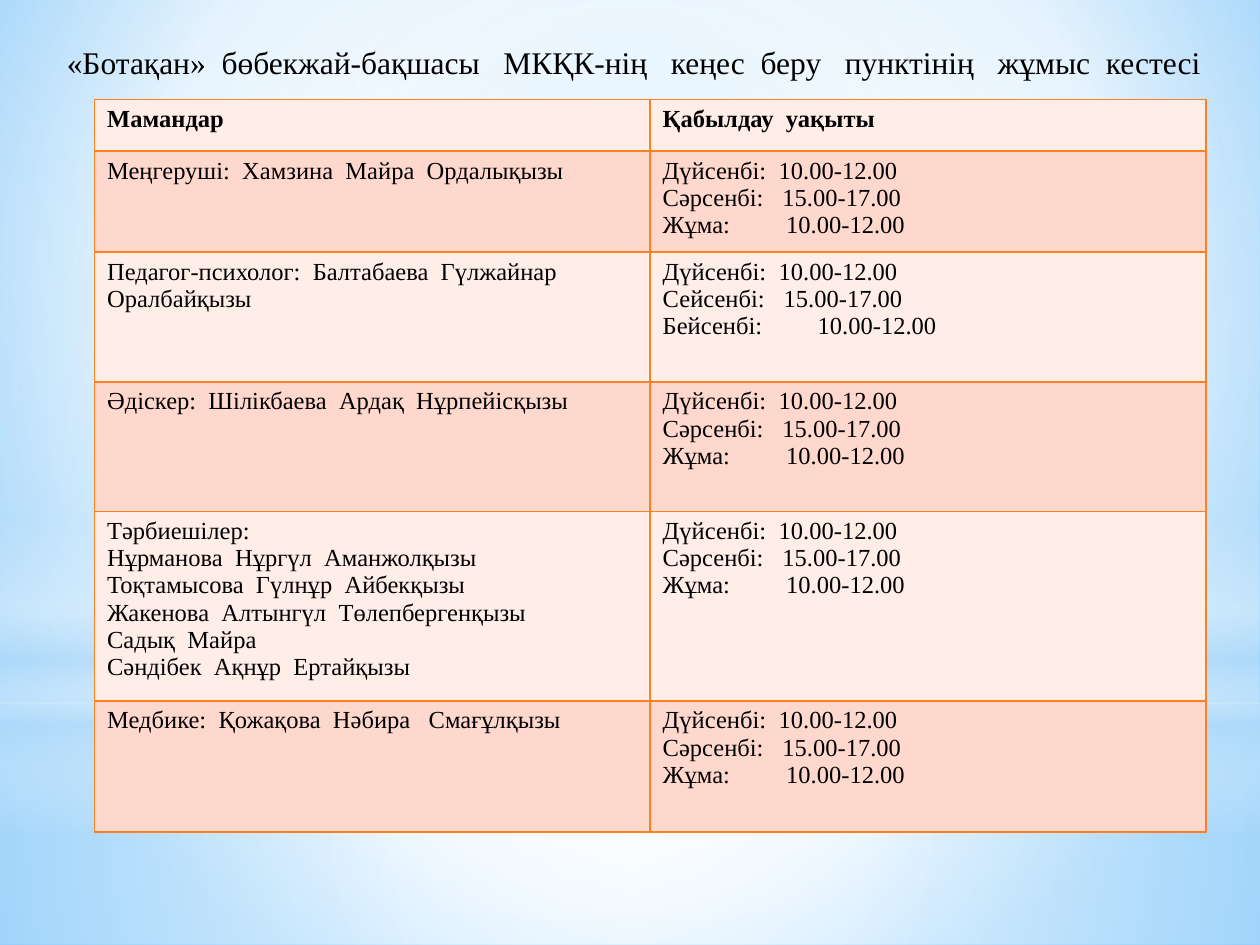
import pptx
import pptx.dml.color
import pptx.enum.shapes
import pptx.enum.text
import pptx.oxml
import pptx.oxml.ns
import pptx.util
from pptx.util import Inches

RGBColor = pptx.dml.color.RGBColor
BLACK = RGBColor(0x00, 0x00, 0x00)
WHITE = RGBColor(0xFF, 0xFF, 0xFF)
SKY = RGBColor(0x9E, 0xD5, 0xFF)
DEEP_SKY = RGBColor(0x5B, 0xB9, 0xFF)
MIST = RGBColor(0xB4, 0xDC, 0xFA)
ORANGE = RGBColor(0xFF, 0x80, 0x21)
PALE_PEACH = RGBColor(0xFF, 0xED, 0xE8)
PEACH = RGBColor(0xFF, 0xD8, 0xCD)

FONT = "Times New Roman"
HEADING = "«Ботақан»  бөбекжай-бақшасы   МКҚК-нің   кеңес  беру   пунктінің   жұмыс  кестесі"
HEADERS = ["Мамандар", "Қабылдау  уақыты"]
DAYS = ["Дүйсенбі", "Сәрсенбі", "Жұма"]
PSYCHOLOGIST_DAYS = ["Дүйсенбі", "Сейсенбі", "Бейсенбі"]
HOURS = ["10.00-12.00", "15.00-17.00", "10.00-12.00"]
HOUR_STOPS = {"Дүйсенбі": 0.92, "Сәрсенбі": 0.95, "Сейсенбі": 0.96,
              "Жұма": 0.98, "Бейсенбі": 1.23}
SPECIALISTS = [
    (["Меңгеруші:  Хамзина  Майра  Ордалықызы"], DAYS, 0.8),
    (["Педагог-психолог:  Балтабаева  Гүлжайнар  Оралбайқызы"], PSYCHOLOGIST_DAYS, 1.03),
    (["Әдіскер:  Шілікбаева  Ардақ  Нұрпейісқызы"], DAYS, 1.03),
    (["Тәрбиешілер:",
      "Нұрманова  Нұргүл  Аманжолқызы",
      "Тоқтамысова  Гүлнұр  Айбекқызы",
      "Жакенова  Алтынгүл  Төлепбергенқызы",
      "Садық  Майра",
      "Сәндібек  Ақнұр  Ертайқызы"], DAYS, 1.5),
    (["Медбике:  Қожақова  Нәбира   Смағұлқызы"], DAYS, 1.04),
]
HEADER_HEIGHT = 0.41

CENTRE = '<a:path path="circle"><a:fillToRect l="50000" t="50000" r="50000" b="50000"/></a:path>'
UPPER = '<a:path path="circle"><a:fillToRect l="20000" t="10000" r="20000" b="60000"/></a:path>'
DOWNWARD = '<a:lin ang="5400000" scaled="0"/>'

GLOWS = [
    ("RECTANGLE", (0, 5.58, 10, 1.92), CENTRE,
     [(0, WHITE, 91), (37, WHITE, 76), (100, MIST, 79)]),
    ("RECTANGLE", (0, 0, 10, 5.58), CENTRE,
     [(0, WHITE, 89), (48, WHITE, 62), (100, MIST, 79)]),
    ("RECTANGLE", (0, 4.12, 10, 2.5), DOWNWARD,
     [(0, WHITE, 0), (29, WHITE, 30), (45, MIST, 40),
      (55, WHITE, 26), (65, MIST, 60), (100, WHITE, 0)]),
    ("OVAL", (0, 1.75, 10, 5.58), CENTRE, [(0, WHITE, 100), (56, WHITE, 0)]),
]


def parse_drawing(xml):
    opening, rest = xml.split(">", 1)
    return pptx.oxml.parse_xml(f"{opening} {pptx.oxml.ns.nsdecls('a')}>{rest}")


def replace_solid_with_gradient(properties, stops, direction):
    stop_xml = "".join(
        f'<a:gs pos="{position * 1000}"><a:srgbClr val="{color}">'
        f'<a:alpha val="{opacity * 1000}"/></a:srgbClr></a:gs>'
        for position, color, opacity in stops)
    gradient = parse_drawing(
        f'<a:gradFill rotWithShape="1"><a:gsLst>{stop_xml}</a:gsLst>{direction}</a:gradFill>')
    properties.replace(properties.find(pptx.oxml.ns.qn("a:solidFill")), gradient)


def style_paragraph(paragraph, size, bold=False):
    font = paragraph.font
    font.name = FONT
    font.size = pptx.util.Pt(size)
    font.bold = bold
    font.color.rgb = BLACK


def paint_sky(slide):
    slide.background.fill.solid()
    backdrop = slide.element.find(".//" + pptx.oxml.ns.qn("p:bgPr"))
    replace_solid_with_gradient(
        backdrop, [(0, SKY, 100), (60, WHITE, 100), (100, DEEP_SKY, 100)], UPPER)
    for outline, box, direction, stops in GLOWS:
        glow = slide.shapes.add_shape(
            pptx.enum.shapes.MSO_SHAPE[outline], *map(Inches, box))
        glow.shadow.inherit = False
        glow.line.fill.background()
        glow.fill.solid()
        replace_solid_with_gradient(glow.element.spPr, stops, direction)


def place_heading(slide, left, top, width, height):
    heading = slide.shapes.title
    slide.shapes.element.append(heading.element)
    heading.left, heading.top = Inches(left), Inches(top)
    heading.width, heading.height = Inches(width), Inches(height)
    frame = heading.text_frame
    frame.text = HEADING
    frame.word_wrap = False
    frame.auto_size = pptx.enum.text.MSO_AUTO_SIZE.SHAPE_TO_FIT_TEXT
    frame.vertical_anchor = pptx.enum.text.MSO_ANCHOR.TOP
    frame.paragraphs[0].alignment = pptx.enum.text.PP_ALIGN.LEFT
    style_paragraph(frame.paragraphs[0], 18)


def fill_cell(cell, lines, color, bold=False):
    cell.text_frame.text = "\n".join(lines)
    for paragraph in cell.text_frame.paragraphs:
        style_paragraph(paragraph, 14, bold)
    cell.fill.solid()
    cell.fill.fore_color.rgb = color
    for index, side in enumerate(("lnL", "lnR", "lnT", "lnB")):
        border = parse_drawing(
            f'<a:{side} w="12700"><a:solidFill><a:srgbClr val="{ORANGE}"/>'
            f'</a:solidFill></a:{side}>')
        cell.fill._xPr.insert(index, border)


def fill_hours(cell, days, color):
    fill_cell(cell, [f"{day}:\t{hours}" for day, hours in zip(days, HOURS)], color)
    for day, paragraph in zip(days, cell.text_frame.paragraphs):
        stops = parse_drawing(
            f'<a:tabLst><a:tab pos="{Inches(HOUR_STOPS[day])}" algn="l"/></a:tabLst>')
        paragraph._p.get_or_add_pPr().insert(0, stops)


def place_schedule(slide, left, top, width, height):
    schedule = slide.shapes.add_table(
        len(SPECIALISTS) + 1, len(HEADERS),
        Inches(left), Inches(top), Inches(width), Inches(height)).table
    schedule.first_row = False
    schedule.horz_banding = False
    schedule.rows[0].height = Inches(HEADER_HEIGHT)
    for column, header in enumerate(HEADERS):
        fill_cell(schedule.cell(0, column), [header], PALE_PEACH, bold=True)
    for row, (people, days, row_height) in enumerate(SPECIALISTS, start=1):
        color = PEACH if row % 2 else PALE_PEACH
        schedule.rows[row].height = Inches(row_height)
        fill_cell(schedule.cell(row, 0), people, color)
        fill_hours(schedule.cell(row, 1), days, color)


def main():
    presentation = pptx.Presentation()
    presentation.slide_width = Inches(10)
    presentation.slide_height = Inches(7.5)
    slide = presentation.slides.add_slide(presentation.slide_layouts[5])
    paint_sky(slide)
    place_heading(slide, 0.43, 0.29, 9.31, 0.4)
    place_schedule(slide, 0.75, 0.79, 8.82, 5.81)
    presentation.save("out.pptx")


if __name__ == "__main__":
    main()
